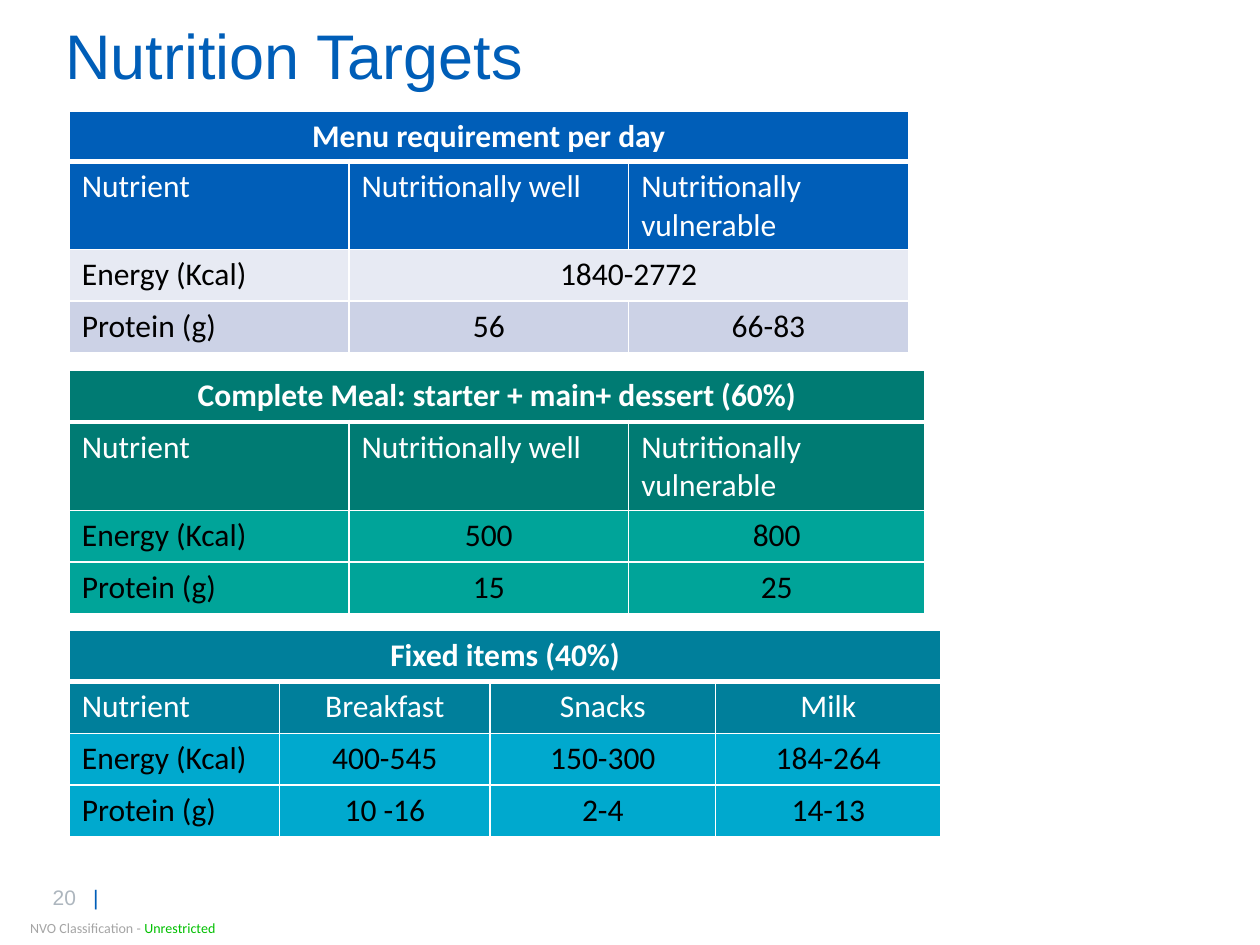
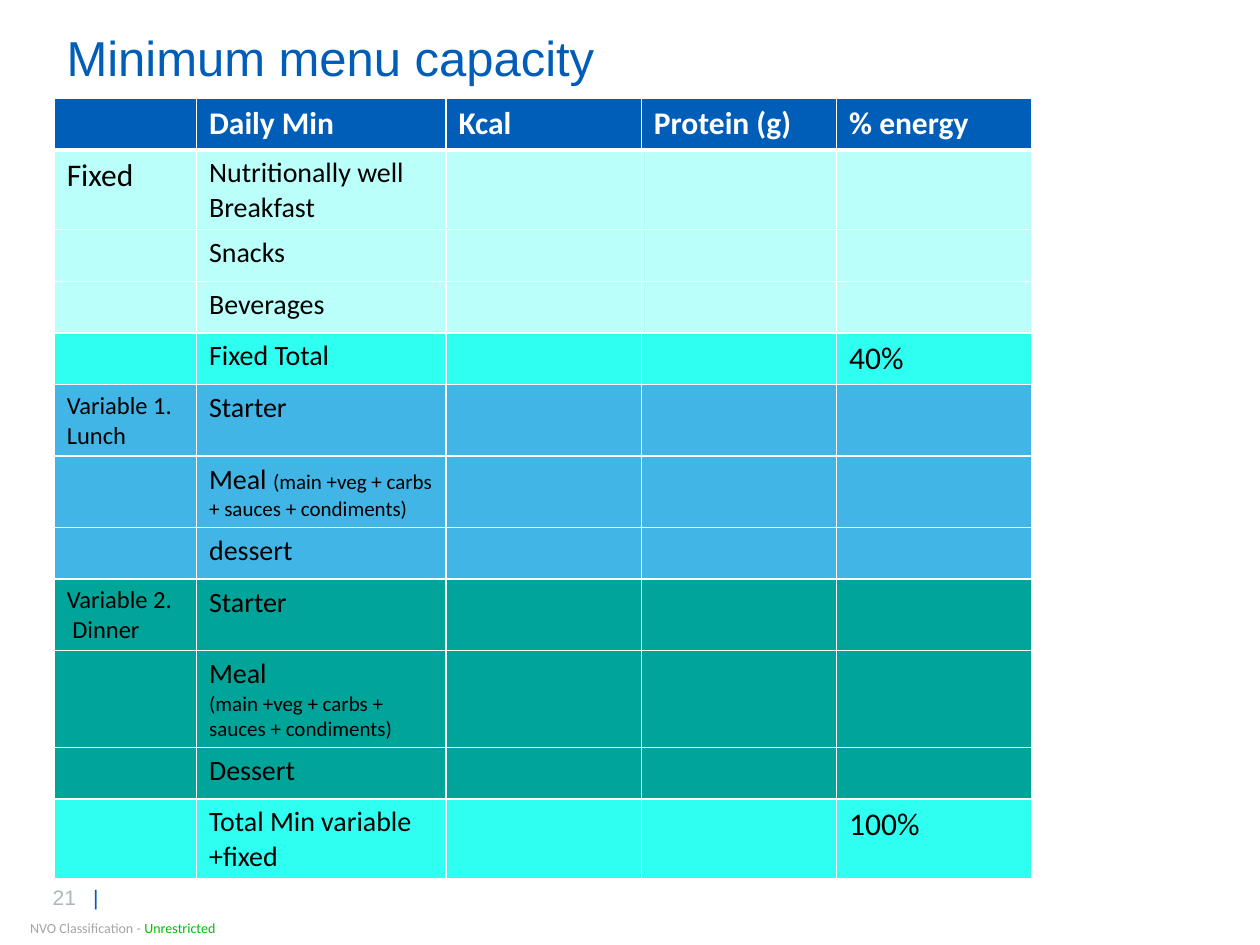
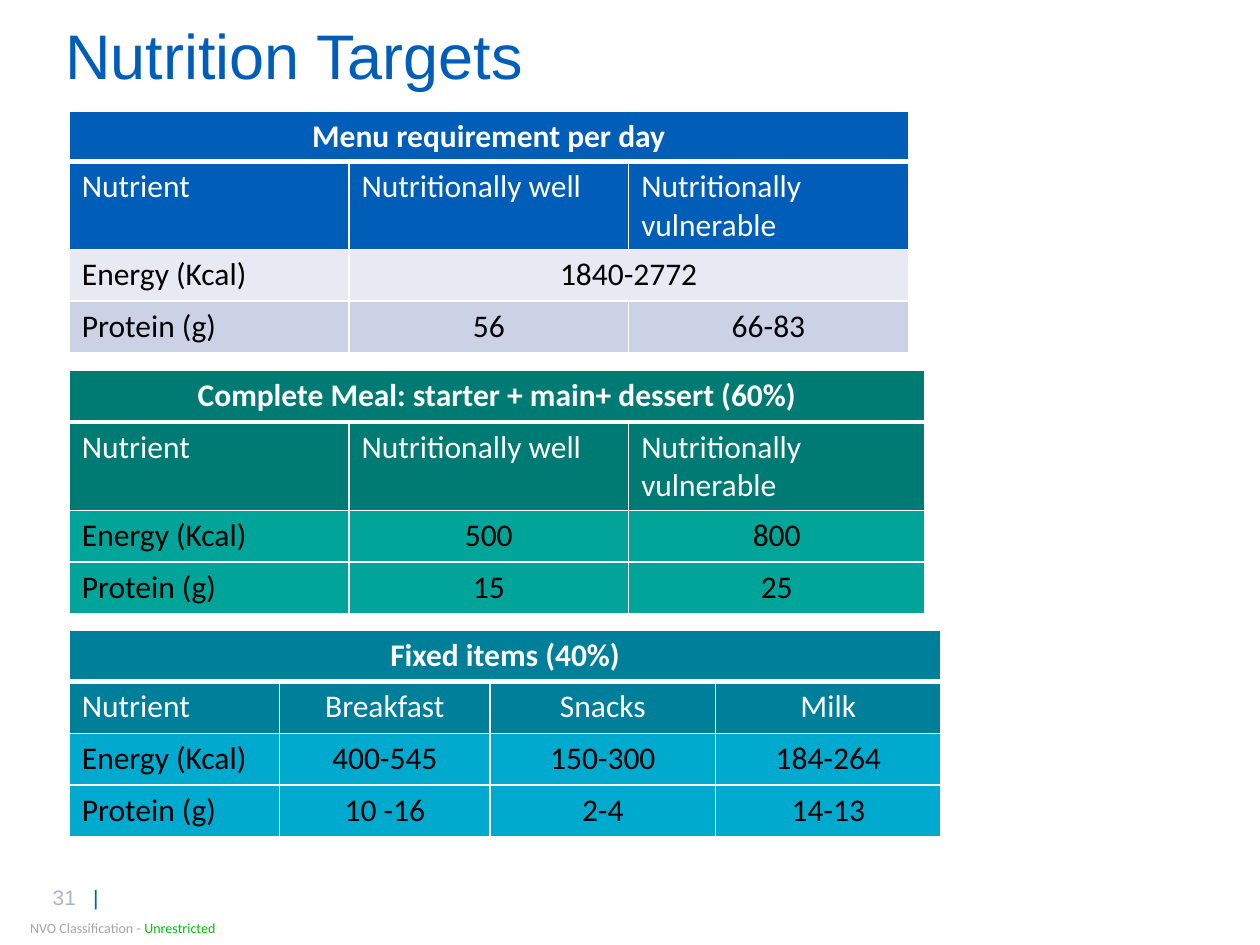
from dataclasses import dataclass

from lxml.etree import SubElement
from pptx import Presentation
from pptx.dml.color import RGBColor
from pptx.enum.text import PP_ALIGN as Align
from pptx.oxml.ns import qn
from pptx.util import Inches, Pt


@dataclass(frozen=True)
class Theme:
    heading_font: str = "Arial"
    body_font: str = "Calibri"
    blue: str = "005EB8"
    pale: str = "E7EAF3"
    lavender: str = "CCD2E6"
    dark_green: str = "007B73"
    green: str = "00A499"
    dark_cyan: str = "007F9B"
    cyan: str = "00A9CE"
    mint: str = "BAFFFA"
    aqua: str = "2FFFF1"
    sky: str = "41B6E6"
    white: str = "FFFFFF"
    black: str = "000000"
    number_grey: str = "ADB6BE"
    label_grey: str = "A5A5A5"
    label_green: str = "00C000"
    title: int = 36
    small_title: int = 28
    body: int = 18
    item: int = 16
    group: int = 14
    detail: int = 12
    number: int = 12
    label: int = 8
    rule: int = 1
    header_rule: int = 3


THEME = Theme()


@dataclass(frozen=True)
class Span:
    text: str
    size: int = THEME.body
    color: str = ""


@dataclass(frozen=True)
class Row:
    fill: str
    cells: list
    ink: str = THEME.black
    bold: bool = False
    centered_from: int = 99


class Deck:
    """Builds slides in one shared style."""

    def __init__(self, theme):
        self.theme = theme
        self.deck = Presentation()
        self.deck.slide_width = Inches(10)
        self.deck.slide_height = Inches(7.5)
        self.page = None

    def add_page(self, number, title, left, top, size):
        theme = self.theme
        self.page = self.deck.slides.add_slide(self.deck.slide_layouts[6])
        counter = self.text(0.32, 6.97, 0.71, 0.3, theme.heading_font, [
            Span(f"{number}\t", theme.number, theme.number_grey),
            Span("|", theme.number, theme.blue)])
        tabs = SubElement(counter._p.get_or_add_pPr(), qn("a:tabLst"))
        SubElement(tabs, qn("a:tab"), pos=str(Inches(0.32)), algn="l")
        heading = self.text(left, top, 7.18, 0.67, theme.heading_font,
                            [Span(title, size, theme.blue)])
        heading.line_spacing = 0.9
        self.text(0.14, 7.25, 9.72, 0.24, theme.body_font, [
            Span("NVO Classification - ", theme.label, theme.label_grey),
            Span("Unrestricted", theme.label, theme.label_green)])

    def text(self, left, top, width, height, font, spans):
        box = self.page.shapes.add_textbox(
            Inches(left), Inches(top), Inches(width), Inches(height))
        box.text_frame.word_wrap = True
        para = box.text_frame.paragraphs[0]
        self.add_spans(para, spans, font)
        return para

    def add_spans(self, para, spans, font, ink="", bold=False):
        for span in spans:
            run = para.add_run()
            run.text = span.text
            run.font.name = font
            run.font.size = Pt(span.size)
            run.font.bold = bold
            run.font.color.rgb = RGBColor.from_string(span.color or ink)

    def table(self, left, top, height, widths, rows, first_height=0.41):
        frame = self.page.shapes.add_table(
            len(rows), len(widths), Inches(left), Inches(top),
            Inches(sum(widths)), Inches(height))
        table = frame.table
        table.first_row = table.horz_banding = False
        for column, width in zip(table.columns, widths):
            column.width = Inches(width)
        for index, row in enumerate(rows):
            table.rows[index].height = Inches(0.41 if index else first_height)
            for column, content in enumerate(row.cells):
                cell = table.cell(index, column)
                cell.fill.solid()
                cell.fill.fore_color.rgb = RGBColor.from_string(row.fill)
                self.borders(cell, index)
                if content:
                    self.fill_cell(cell, content, row, column)
            self.merge(table, index, row.cells)
        frame.height = Inches(height)

    def fill_cell(self, cell, content, row, column):
        lines = [[Span(content)]] if isinstance(content, str) else content
        frame = cell.text_frame
        for number, spans in enumerate(lines):
            para = frame.add_paragraph() if number else frame.paragraphs[0]
            if column >= row.centered_from:
                para.alignment = Align.CENTER
            self.add_spans(para, spans, self.theme.body_font, row.ink, row.bold)

    def merge(self, table, index, cells):
        if None in cells:
            start = cells.index(None) - 1
            table.cell(index, start).merge(table.cell(index, len(cells) - 1))

    def borders(self, cell, index):
        theme = self.theme
        thick = {"B": 0, "T": 1}
        properties = cell._tc.get_or_add_tcPr()
        for position, side in enumerate("LRTB"):
            heavy = thick.get(side) == index
            width = theme.header_rule if heavy else theme.rule
            line = SubElement(properties, qn(f"a:ln{side}"), w=str(Pt(width)))
            fill = SubElement(line, qn("a:solidFill"))
            SubElement(fill, qn("a:srgbClr"), val=theme.white)
            properties.insert(position, line)

    def nutrient_table(self, top, height, widths, caption, headings, dark,
                       energy, protein, fills, first_height=0.41):
        white = self.theme.white
        heading_start = 1 if len(headings) > 2 else 99
        rows = [
            Row(dark, [caption] + [None] * len(headings), white, True, 0),
            Row(dark, ["Nutrient", *headings], white,
                centered_from=heading_start),
            Row(fills[0], ["Energy (Kcal)", *energy], centered_from=1),
            Row(fills[1], ["Protein (g)", *protein], centered_from=1)]
        self.table(0.55, top, height, widths, rows, first_height)

    def save(self):
        self.deck.save("out.pptx")


def add_targets(deck, number):
    theme = deck.theme
    groups = ["Nutritionally well", "Nutritionally vulnerable"]
    deck.add_page(number, "Nutrition Targets", 0.42, 0.15, theme.title)
    deck.nutrient_table(
        0.88, 1.91, [2.22] * 3, "Menu requirement per day", groups, theme.blue,
        ["1840-2772", None], ["56", "66-83"], [theme.pale, theme.lavender],
        first_height=0.29)
    deck.nutrient_table(
        2.94, 1.92, [2.22, 2.22, 2.35],
        "Complete Meal: starter + main+ dessert (60%)", groups,
        theme.dark_green, ["500", "800"], ["15", "25"], [theme.green] * 2)
    deck.nutrient_table(
        5, 1.62, [1.67, 1.67, 1.79, 1.79], "Fixed items (40%)",
        ["Breakfast", "Snacks", "Milk"], theme.dark_cyan,
        ["400-545", "150-300", "184-264"], ["10 -16", "2-4", "14-13"],
        [theme.cyan] * 2)


def add_capacity(deck, number):
    theme = deck.theme
    detail = Span("(main +veg + carbs + sauces + condiments)", theme.detail)

    def item(text):
        return Span(text, theme.item)

    def group(*lines):
        return [[Span(line, theme.group)] for line in lines]

    def menu_row(fill, label, entry, share=""):
        lines = [[item(entry)]] if isinstance(entry, str) else entry
        return Row(fill, [label, lines, "", "", share])

    rows = [
        Row(theme.blue, ["", "Daily Min", "Kcal", "Protein (g)", "% energy"],
            theme.white, True),
        menu_row(theme.mint, "Fixed", "Nutritionally well Breakfast"),
        menu_row(theme.mint, "", "Snacks"),
        menu_row(theme.mint, "", "Beverages"),
        menu_row(theme.aqua, "", "Fixed Total", "40%"),
        menu_row(theme.sky, group("Variable 1.", "Lunch"), "Starter"),
        menu_row(theme.sky, "", [[item("Meal "), detail]]),
        menu_row(theme.sky, "", "dessert"),
        menu_row(theme.green, group("Variable 2.", " Dinner"), "Starter"),
        menu_row(theme.green, "", [[item("Meal")], [detail]]),
        menu_row(theme.green, "", "Dessert"),
        menu_row(theme.aqua, "", "Total Min variable +fixed", "100%")]
    deck.add_page(number, "Minimum menu capacity", 0.43, 0.22,
                  theme.small_title)
    deck.table(0.43, 0.78, 6.17, [1.13, 1.98, 1.55, 1.55, 1.55], rows)


def main():
    deck = Deck(THEME)
    add_targets(deck, 20)
    add_capacity(deck, 21)
    add_targets(deck, 31)
    deck.save()


if __name__ == "__main__":
    main()
